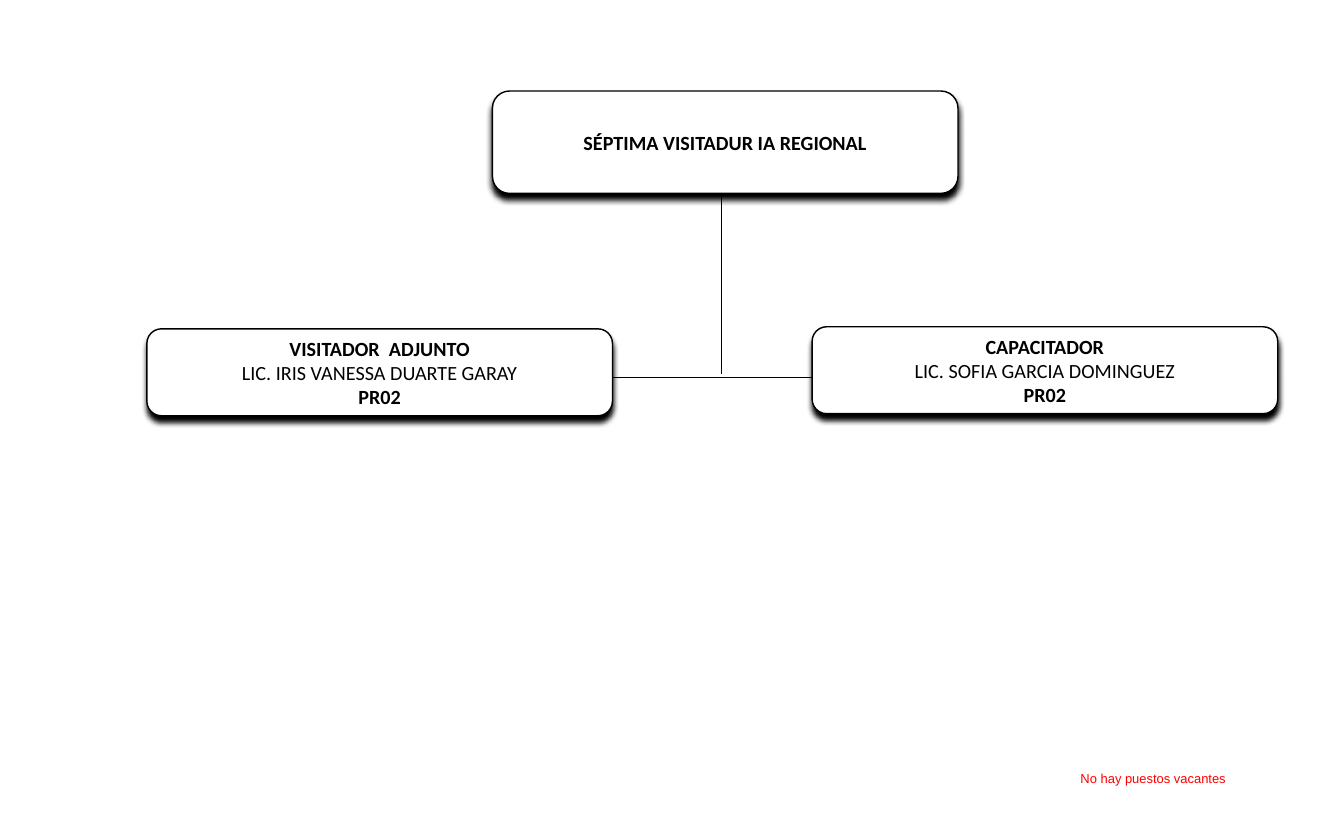
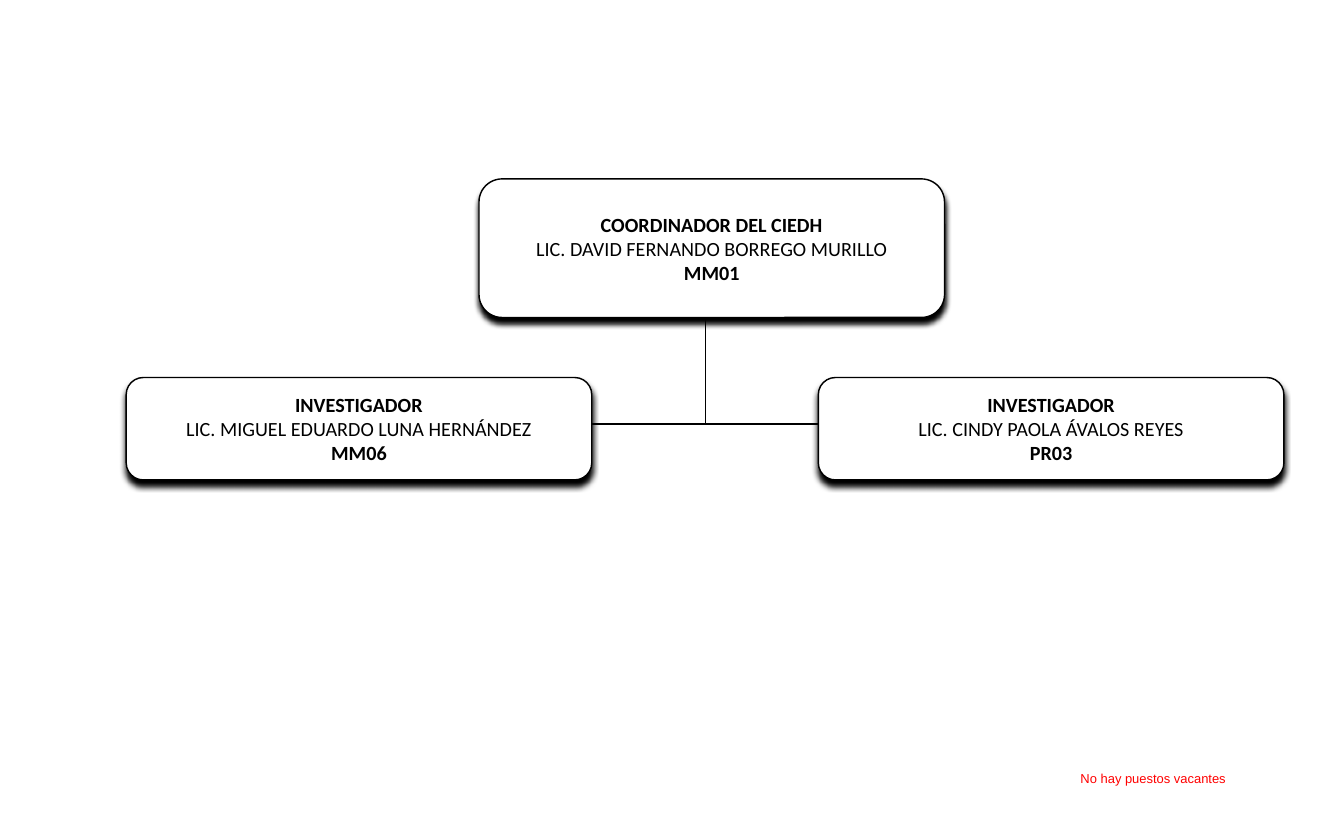
"""Builds two organisation chart slides."""
from lxml import etree
from pptx import Presentation
from pptx.dml.color import RGBColor
from pptx.enum import shapes, text
from pptx.oxml import parse_xml
from pptx.oxml.ns import nsdecls, qn
from pptx.util import Inches, Pt

BLACK = RGBColor(0x00, 0x00, 0x00)
WHITE = RGBColor(0xFF, 0xFF, 0xFF)
RED = RGBColor(0xFF, 0x00, 0x00)
BOX_WIDTH = 4.5
SHADOW = (
    f'<a:effectLst {nsdecls("a")}>'
    f'<a:outerShdw blurRad="{Pt(4)}" dist="{Pt(4)}" dir="5400000" algn="ctr" rotWithShape="0">'
    f'<a:srgbClr val="{BLACK}"/></a:outerShdw></a:effectLst>'
)

CHARTS = [
    {
        "boxes": [
            (4.76, 0.88, 0.99, ["SÉPTIMA VISITADUR IA REGIONAL"]),
            (1.42, 3.18, 0.84, ["VISITADOR  ADJUNTO", "LIC. IRIS VANESSA DUARTE GARAY", "PR02"]),
            (7.85, 3.16, 0.84, ["CAPACITADOR", "LIC. SOFIA GARCIA DOMINGUEZ", "PR02"]),
        ],
        "stem": (6.97, 1.89, 6.97, 3.62),
        "crossbar": (5.79, 3.65, 8.09, 3.65),
    },
    {
        "boxes": [
            (4.63, 1.73, 1.34, ["COORDINADOR DEL CIEDH", "LIC. DAVID FERNANDO BORREGO MURILLO", "MM01"]),
            (1.22, 3.65, 0.99, ["INVESTIGADOR", "LIC. MIGUEL EDUARDO LUNA HERNÁNDEZ", "MM06"]),
            (7.91, 3.65, 0.99, ["INVESTIGADOR", "LIC. CINDY PAOLA ÁVALOS REYES", "PR03"]),
        ],
        "stem": (6.82, 2.84, 6.82, 4.1),
        "crossbar": (5.72, 4.1, 7.93, 4.1),
    },
]


def write_lines(frame, lines, font_name, size, color):
    """Fill a text frame with centred paragraphs in one font."""
    for index, line in enumerate(lines):
        paragraph = frame.paragraphs[0] if index == 0 else frame.add_paragraph()
        paragraph.text = line
        paragraph.alignment = text.PP_ALIGN.CENTER
        paragraph.font.name = font_name
        paragraph.font.size = Pt(size)
        paragraph.font.color.rgb = color


def add_line(slide, ends):
    """Draw a thin black line between two points."""
    line = slide.shapes.add_connector(shapes.MSO_CONNECTOR.STRAIGHT, *map(Inches, ends))
    line.line.color.rgb = BLACK
    line.line.width = Pt(0.75)
    etree.SubElement(line._element.spPr, qn("a:effectLst"))


def add_box(slide, left, top, height, lines):
    """Draw a shadowed post box; the person's name is the only light line."""
    shape = slide.shapes.add_shape(
        shapes.MSO_SHAPE.ROUNDED_RECTANGLE,
        Inches(left), Inches(top), Inches(BOX_WIDTH), Inches(height))
    shape.fill.solid()
    shape.fill.fore_color.rgb = WHITE
    shape.line.color.rgb = BLACK
    shape.line.width = Pt(1)
    shape._element.spPr.append(parse_xml(SHADOW))
    frame = shape.text_frame
    frame.word_wrap = False
    frame.vertical_anchor = text.MSO_ANCHOR.MIDDLE
    frame.margin_left = frame.margin_right = Inches(0.17)
    frame.margin_top = frame.margin_bottom = Inches(0.09)
    write_lines(frame, lines, "Calibri", 14, BLACK)
    for index, paragraph in enumerate(frame.paragraphs):
        paragraph.font.bold = index != 1


def add_vacancy_note(slide):
    """Place the red note on vacancies at the foot of the slide."""
    note = slide.shapes.add_textbox(Inches(9.49), Inches(7.4), Inches(3.31), Inches(0.25))
    note.text_frame.word_wrap = True
    note.text_frame.auto_size = text.MSO_AUTO_SIZE.SHAPE_TO_FIT_TEXT
    write_lines(note.text_frame, ["No hay puestos vacantes"], "Arial", 9, RED)


def add_chart_slide(presentation, chart):
    """Add one organisation chart slide."""
    slide = presentation.slides.add_slide(presentation.slide_layouts[6])
    add_line(slide, chart["stem"])
    add_line(slide, chart["crossbar"])
    for box in chart["boxes"]:
        add_box(slide, *box)
    add_vacancy_note(slide)


def main():
    """Build and save the presentation."""
    presentation = Presentation()
    presentation.slide_width = Inches(12.99)
    presentation.slide_height = Inches(7.88)
    for chart in CHARTS:
        add_chart_slide(presentation, chart)
    presentation.save("out.pptx")


if __name__ == "__main__":
    main()
